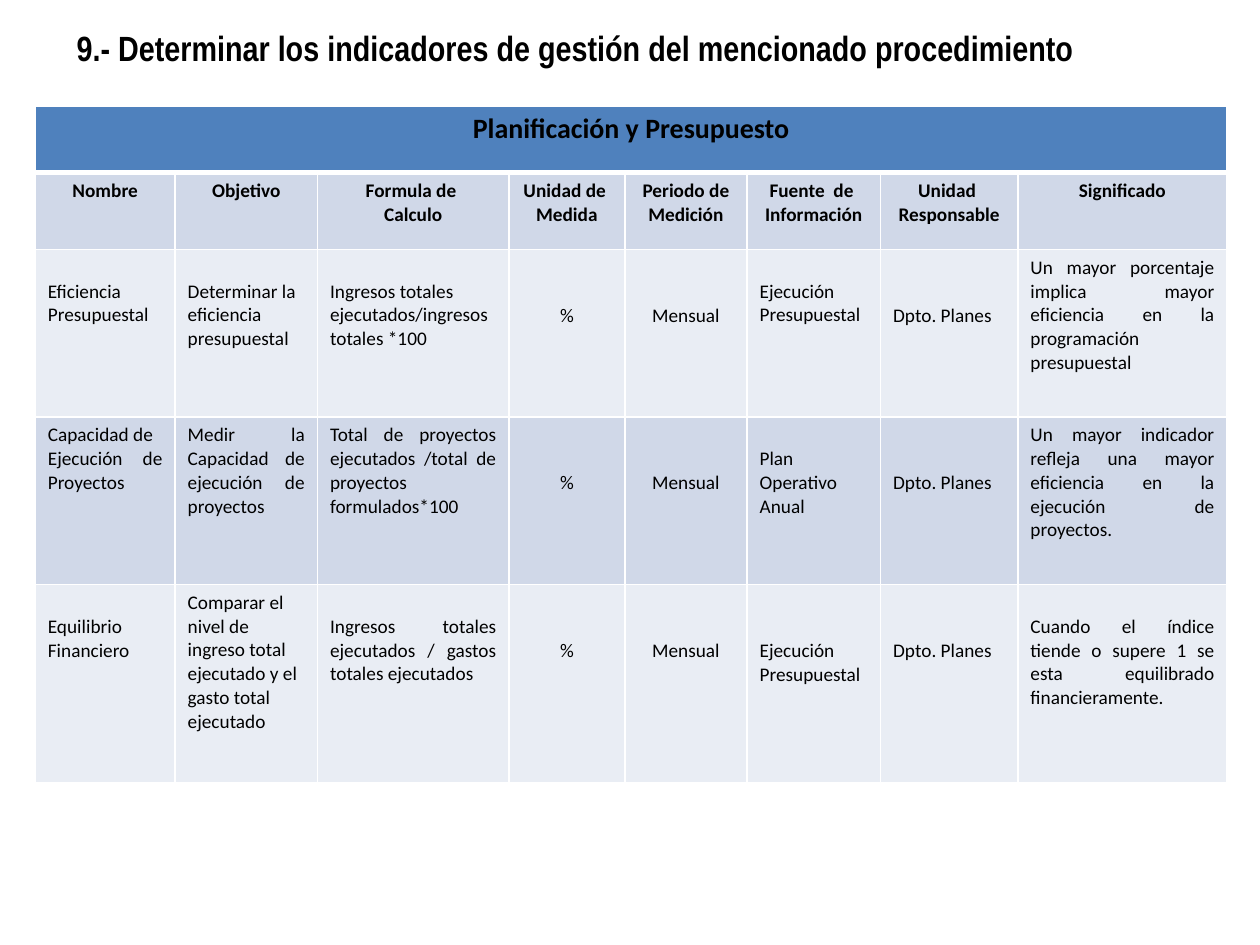
import pptx
import pptx.util
import pptx.dml.color
import pptx.enum.text
import pptx.oxml.ns
import lxml.etree

Inches, Pt = pptx.util.Inches, pptx.util.Pt
RGBColor = pptx.dml.color.RGBColor
ALIGN = pptx.enum.text.PP_ALIGN

BLACK = RGBColor(0x00, 0x00, 0x00)
WHITE = RGBColor(0xFF, 0xFF, 0xFF)
BLUE = RGBColor(0x4F, 0x81, 0xBD)
BAND_DARK = RGBColor(0xD0, 0xD8, 0xE8)
BAND_LIGHT = RGBColor(0xE9, 0xED, 0xF4)

HEADING = "9.- Determinar los indicadores de gestión del mencionado procedimiento"
TABLE_TITLE = "Planificación y Presupuesto"
HEADERS = [
    "Nombre", "Objetivo", "Formula de \nCalculo", "Unidad de \nMedida",
    "Periodo de\nMedición", "Fuente  de \nInformación",
    "Unidad \nResponsable", "Significado",
]
# Each entry: lines of offset from the top of the cell, text
INDICATORS = [
    [(1, "Eficiencia \nPresupuestal"),
     (1, "Determinar la \neficiencia \npresupuestal "),
     (1, "Ingresos totales \nejecutados/ingresos \ntotales *100"),
     (2, "%"), (2, "Mensual"), (1, "Ejecución Presupuestal"), (2, "Dpto. Planes"),
     (0, "Un mayor porcentaje implica mayor eficiencia en la programación presupuestal")],
    [(0, "Capacidad de\nEjecución de Proyectos"),
     (0, "Medir la Capacidad de ejecución de proyectos"),
     (0, "Total de proyectos ejecutados /total de proyectos formulados*100"),
     (2, "%"), (2, "Mensual"), (1, "Plan Operativo Anual"), (2, "Dpto. Planes"),
     (0, "Un mayor indicador refleja una mayor eficiencia en la ejecución de proyectos.")],
    [(1, "Equilibrio Financiero"),
     (0, "Comparar el nivel de ingreso total ejecutado y el gasto total ejecutado"),
     (1, "Ingresos totales ejecutados / gastos totales ejecutados"),
     (2, "%"), (2, "Mensual"), (2, "Ejecución Presupuestal"), (2, "Dpto. Planes"),
     (1, "Cuando el índice tiende o supere 1 se esta equilibrado financieramente.")],
]
COLUMN_WIDTHS = [1.11, 1.13, 1.52, 0.92, 0.97, 1.06, 1.09, 1.66]
ROW_HEIGHTS = [0.53, 0.61, 1.33, 1.33, 1.57]
COLUMN_ALIGNMENTS = [ALIGN.JUSTIFY] * 3 + [ALIGN.CENTER] * 2 + [ALIGN.JUSTIFY] * 3
LEFT_ALIGNED = {(4, 0), (4, 1)}
CELL_MARGIN = 0.05
LINE_HEIGHT = 0.19


def style_paragraphs(text_frame, font_name, size, bold, alignment):
    for paragraph in text_frame.paragraphs:
        paragraph.alignment = alignment
        paragraph.font.name = font_name
        paragraph.font.size = Pt(size)
        paragraph.font.bold = bold
        paragraph.font.color.rgb = BLACK


def set_borders(cell, top, bottom):
    """Draw white cell borders; must run before the fill is set."""
    properties = cell._tc.get_or_add_tcPr()
    qn = pptx.oxml.ns.qn
    for side, width in (("L", 1), ("R", 1), ("T", top), ("B", bottom)):
        line = lxml.etree.SubElement(properties, qn(f"a:ln{side}"), w=str(Pt(width)))
        fill = lxml.etree.SubElement(line, qn("a:solidFill"))
        lxml.etree.SubElement(fill, qn("a:srgbClr"), val=str(WHITE))


def fill_cell(cell, text, size, bold, alignment, offset_lines=0):
    cell.text = text
    cell.margin_top = Inches(CELL_MARGIN + offset_lines * LINE_HEIGHT)
    style_paragraphs(cell.text_frame, "Calibri", size, bold, alignment)


presentation = pptx.Presentation()
presentation.slide_width, presentation.slide_height = Inches(10), Inches(7.5)
slide = presentation.slides.add_slide(presentation.slide_layouts[6])

heading = slide.shapes.add_textbox(Inches(0.51), Inches(0.16), Inches(9.06), Inches(0.44))
heading.text_frame.word_wrap = True
heading.text_frame.auto_size = pptx.enum.text.MSO_AUTO_SIZE.SHAPE_TO_FIT_TEXT
heading.text_frame.text = HEADING
style_paragraphs(heading.text_frame, "Arial Narrow", 20, True, ALIGN.JUSTIFY)

table = slide.shapes.add_table(
    len(ROW_HEIGHTS), len(COLUMN_WIDTHS), Inches(0.28), Inches(0.84),
    Inches(sum(COLUMN_WIDTHS)), Inches(sum(ROW_HEIGHTS))).table
for column, width in zip(table.columns, COLUMN_WIDTHS):
    column.width = Inches(width)
for row, height in zip(table.rows, ROW_HEIGHTS):
    row.height = Inches(height)

row_fills = [BLUE, BAND_DARK, BAND_LIGHT, BAND_DARK, BAND_LIGHT]
for row_index, (row, color) in enumerate(zip(table.rows, row_fills)):
    for cell in row.cells:
        set_borders(cell, top=3 if row_index == 1 else 1, bottom=3 if row_index == 0 else 1)
        cell.fill.solid()
        cell.fill.fore_color.rgb = color

table.cell(0, 0).merge(table.cell(0, len(COLUMN_WIDTHS) - 1))
fill_cell(table.cell(0, 0), TABLE_TITLE, 16, True, ALIGN.CENTER)
for column_index, header in enumerate(HEADERS):
    fill_cell(table.cell(1, column_index), header, 11, True, ALIGN.CENTER)
for row_index, indicator in enumerate(INDICATORS, start=2):
    for column_index, (offset_lines, text) in enumerate(indicator):
        left = (row_index, column_index) in LEFT_ALIGNED
        alignment = ALIGN.LEFT if left else COLUMN_ALIGNMENTS[column_index]
        fill_cell(table.cell(row_index, column_index), text, 11, False, alignment, offset_lines)

presentation.save("out.pptx")
